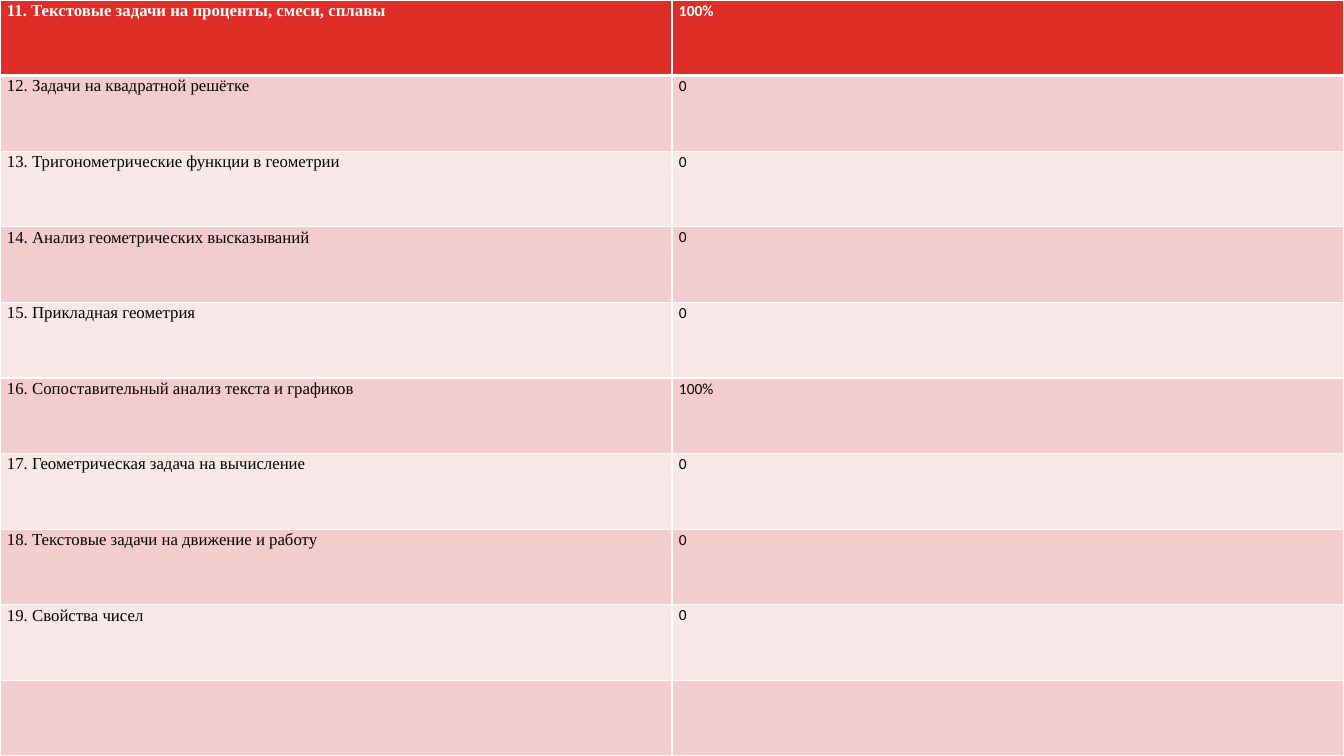
"""Build a slide with a full-page table of exam topics and their results."""
from dataclasses import dataclass

import pptx
import pptx.dml.color
import pptx.oxml.ns
import pptx.table
import pptx.util
from lxml import etree

Pt = pptx.util.Pt
RGBColor = pptx.dml.color.RGBColor

WHITE = RGBColor(0xFF, 0xFF, 0xFF)
BLACK = RGBColor(0x00, 0x00, 0x00)
RED = RGBColor(0xDF, 0x2E, 0x28)
PINK = RGBColor(0xF3, 0xCD, 0xCD)
PALE_PINK = RGBColor(0xF9, 0xE8, 0xE8)

PAGE_WIDTH, PAGE_HEIGHT = Pt(960), Pt(540)
THIN, THICK = Pt(1), Pt(3)
MARGINS = {"margin_left": Pt(5), "margin_right": Pt(5), "margin_top": 0, "margin_bottom": 0}
TOPIC_FONT = {"name": "Times New Roman", "size": Pt(12)}
RESULT_FONT = {"name": "Calibri", "size": Pt(11)}


@dataclass(frozen=True)
class TopicRow:
    topic: str = ""
    result: str = ""


ROWS = (
    TopicRow("11. Текстовые задачи на проценты, смеси, сплавы", "100%"),
    TopicRow("12. Задачи на квадратной решётке", "0"),
    TopicRow("13. Тригонометрические функции в геометрии", "0"),
    TopicRow("14. Анализ геометрических высказываний", "0"),
    TopicRow("15. Прикладная геометрия", "0"),
    TopicRow("16. Сопоставительный анализ текста и графиков", "100%"),
    TopicRow("17. Геометрическая задача на вычисление", "0"),
    TopicRow("18. Текстовые задачи на движение и работу", "0"),
    TopicRow("19. Свойства чисел", "0"),
    TopicRow(),
)


def set_attributes(target: object, values: dict) -> None:
    """Set every named attribute on the target."""
    for name, value in values.items():
        setattr(target, name, value)


def add_borders(cell: pptx.table._Cell, top: int, bottom: int) -> None:
    """Draw white borders around a cell."""
    qn = pptx.oxml.ns.qn
    properties = cell._tc.get_or_add_tcPr()
    for side, width in {"L": THIN, "R": THIN, "T": top, "B": bottom}.items():
        line = etree.SubElement(properties, qn(f"a:ln{side}"), w=str(int(width)))
        fill = etree.SubElement(line, qn("a:solidFill"))
        etree.SubElement(fill, qn("a:srgbClr"), val=str(WHITE))


def fill_cell(cell: pptx.table._Cell, text: str, font: dict, row: int) -> None:
    """Write and format one cell according to its row."""
    is_header = row == 0
    set_attributes(cell, MARGINS)
    add_borders(cell, THICK if row == 1 else THIN, THICK if is_header else THIN)
    cell.fill.solid()
    cell.fill.fore_color.rgb = RED if is_header else (PALE_PINK, PINK)[row % 2]
    if text:
        para = cell.text_frame.paragraphs[0]
        para.line_spacing = 1.07
        span = para.add_run()
        span.text = text
        set_attributes(span.font, font | {"bold": is_header})
        span.font.color.rgb = WHITE if is_header else BLACK


def main() -> None:
    """Create the deck and save it."""
    deck = pptx.Presentation()
    set_attributes(deck, {"slide_width": PAGE_WIDTH, "slide_height": PAGE_HEIGHT})
    page = deck.slides.add_slide(deck.slide_layouts[6])
    page.background.fill.solid()
    page.background.fill.fore_color.rgb = BLACK
    table = page.shapes.add_table(len(ROWS), 2, 0, 0, PAGE_WIDTH, PAGE_HEIGHT).table
    for index, row in enumerate(ROWS):
        fill_cell(table.cell(index, 0), row.topic, TOPIC_FONT, index)
        fill_cell(table.cell(index, 1), row.result, RESULT_FONT, index)
    deck.save("out.pptx")


if __name__ == "__main__":
    main()
